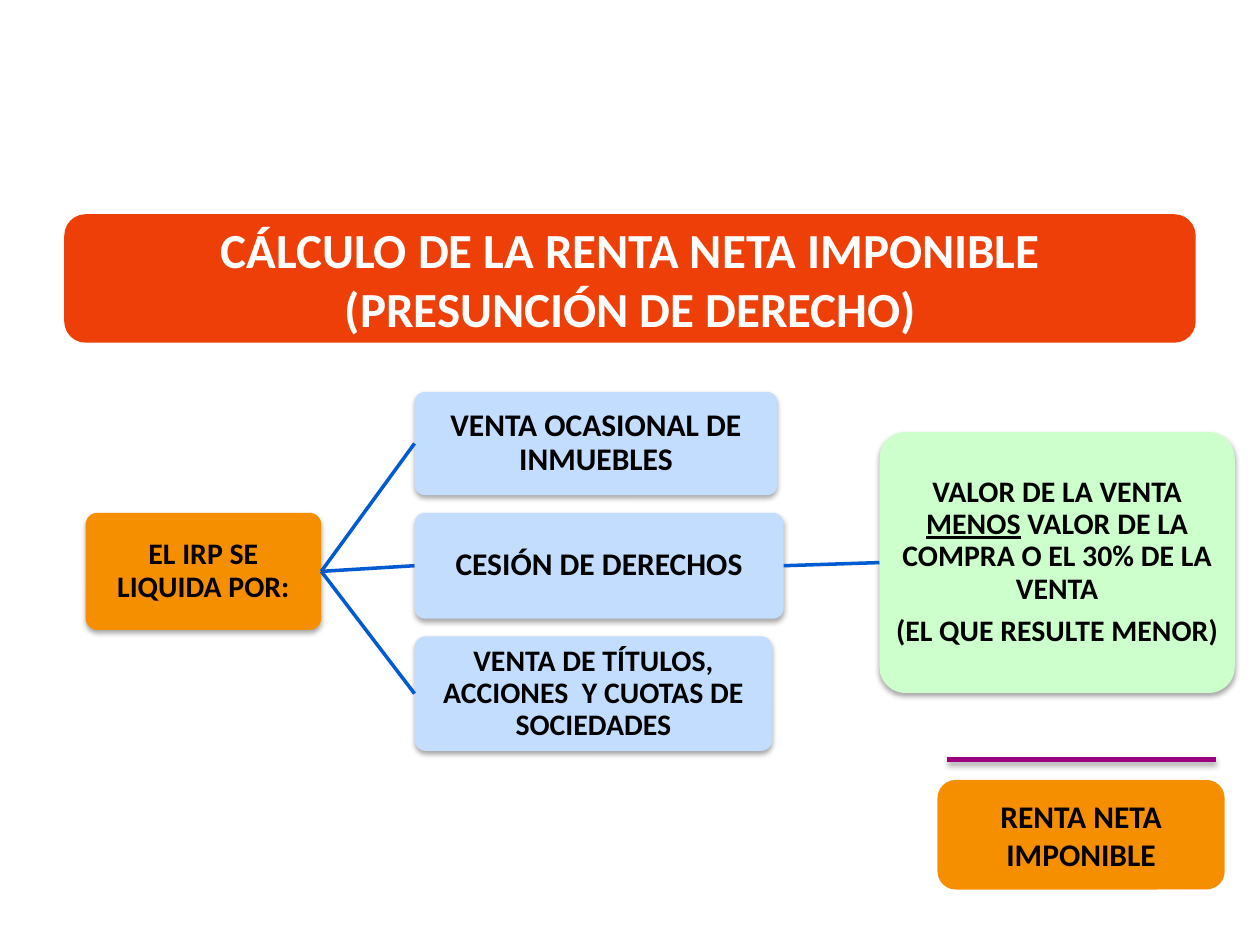
from lxml import etree
from pptx import Presentation
from pptx.dml.color import RGBColor
from pptx.enum import shapes, text
from pptx.oxml.ns import qn
from pptx.util import Inches, Pt

ORANGE = RGBColor(0xF6, 0x8F, 0x00)
RED = RGBColor(0xEE, 0x3F, 0x08)
LIGHT_BLUE = RGBColor(0xC3, 0xDD, 0xFF)
LIGHT_GREEN = RGBColor(0xCC, 0xFF, 0xCC)
BLUE = RGBColor(0x00, 0x5B, 0xD3)
PURPLE = RGBColor(0x9C, 0x00, 0x7F)
BLACK = RGBColor(0, 0, 0)
WHITE = RGBColor(0xFF, 0xFF, 0xFF)
RIGHT, LEFT = 3, 1


def set_effects(sp, shadow):
    """Give the shape a soft shadow below it, or no effect at all."""
    spPr = sp._element.spPr
    for old in spPr.findall(qn("a:effectLst")):
        spPr.remove(old)
    effects = etree.SubElement(spPr, qn("a:effectLst"))
    if shadow:
        outer = etree.SubElement(effects, qn("a:outerShdw"), blurRad="40000",
                                 dist="23000", dir="5400000", rotWithShape="0")
        color = etree.SubElement(outer, qn("a:srgbClr"), val="000000")
        etree.SubElement(color, qn("a:alpha"), val="35000")


def add_text(sp, paragraphs, size, color=BLACK, inset=None, spacing=None,
             after=None, underlined=()):
    """Each paragraph is a list of runs."""
    tf = sp.text_frame
    tf.word_wrap = True
    tf.vertical_anchor = text.MSO_ANCHOR.MIDDLE
    if inset is not None:
        tf.margin_left = tf.margin_right = Inches(inset)
        tf.margin_top = tf.margin_bottom = Inches(inset)
    for i, runs in enumerate(paragraphs):
        p = tf.paragraphs[0] if i == 0 else tf.add_paragraph()
        p.alignment = text.PP_ALIGN.CENTER
        p.line_spacing = spacing
        if after is not None:
            p.space_after = Pt(after)
        for words in runs:
            r = p.add_run()
            r.text = words
            r.font.name = "Calibri"
            r.font.size = Pt(size)
            r.font.bold = True
            r.font.color.rgb = color
            if words in underlined:
                r.font.underline = True


def add_box(s, left, top, width, height, fill, shadow=False, corner=None):
    sp = s.shapes.add_shape(shapes.MSO_SHAPE.ROUNDED_RECTANGLE, Inches(left),
                            Inches(top), Inches(width), Inches(height))
    if corner is not None:
        sp.adjustments[0] = corner
    sp.fill.solid()
    sp.fill.fore_color.rgb = fill
    sp.line.fill.background()
    set_effects(sp, shadow)
    return sp


def add_node(s, box, fill, paragraphs, size, inset=0.04, underlined=()):
    """A box of the diagram."""
    sp = add_box(s, *box, fill, shadow=True, corner=0.1)
    add_text(sp, paragraphs, size, inset=inset, spacing=0.9, after=6,
             underlined=underlined)
    return sp


def add_line(s, x1, y1, x2, y2, color, width, shadow=False):
    line = s.shapes.add_connector(shapes.MSO_CONNECTOR.STRAIGHT, Inches(x1),
                                  Inches(y1), Inches(x2), Inches(y2))
    line.line.color.rgb = color
    line.line.width = Pt(width)
    set_effects(line, shadow)
    return line


def join(s, start, end):
    line = add_line(s, 0, 0, 1, 1, BLUE, 2)
    line.begin_connect(start, RIGHT)
    line.end_connect(end, LEFT)


def main():
    prs = Presentation()
    prs.slide_width, prs.slide_height = Inches(10), Inches(7.5)
    s = prs.slides.add_slide(prs.slide_layouts[6])

    # Title
    title = add_box(s, 0.51, 1.7, 8.98, 1.02, RED)
    add_text(title, [["CÁLCULO DE LA RENTA NETA IMPONIBLE"],
                     ["(PRESUNCIÓN DE DERECHO)"]], 28, WHITE)

    # Root, its three cases and the rule
    root = add_node(s, (0.68, 4.07, 1.87, 0.93), ORANGE,
                    [["EL IRP SE LIQUIDA POR:"]], 17)
    cases = [
        add_node(s, (3.29, top, width, height), LIGHT_BLUE, [[words]], size)
        for top, width, height, size, words in (
            (3.11, 2.88, 0.82, 18, "VENTA OCASIONAL DE INMUEBLES"),
            (4.07, 2.93, 0.84, 18, "CESIÓN DE DERECHOS"),
            (5.05, 2.84, 0.91, 17,
             "VENTA DE TÍTULOS, ACCIONES  Y CUOTAS DE SOCIEDADES"),
        )
    ]
    rule = add_node(s, (6.98, 3.43, 2.82, 2.07), LIGHT_GREEN,
                    [["VALOR DE LA VENTA ", "MENOS",
                      " VALOR DE LA COMPRA O EL 30% DE LA VENTA"],
                     ["(EL QUE RESULTE MENOR)"]], 17, inset=0.07,
                    underlined=("MENOS",))
    for case in cases:
        join(s, root, case)
    join(s, cases[1], rule)

    # Result under the total line
    result = add_box(s, 7.44, 6.19, 2.28, 0.87, ORANGE)
    add_text(result, [["RENTA NETA IMPONIBLE"]], 18)
    add_line(s, 7.52, 6.03, 9.65, 6.03, PURPLE, 3, shadow=True)

    prs.save("out.pptx")


if __name__ == "__main__":
    main()
